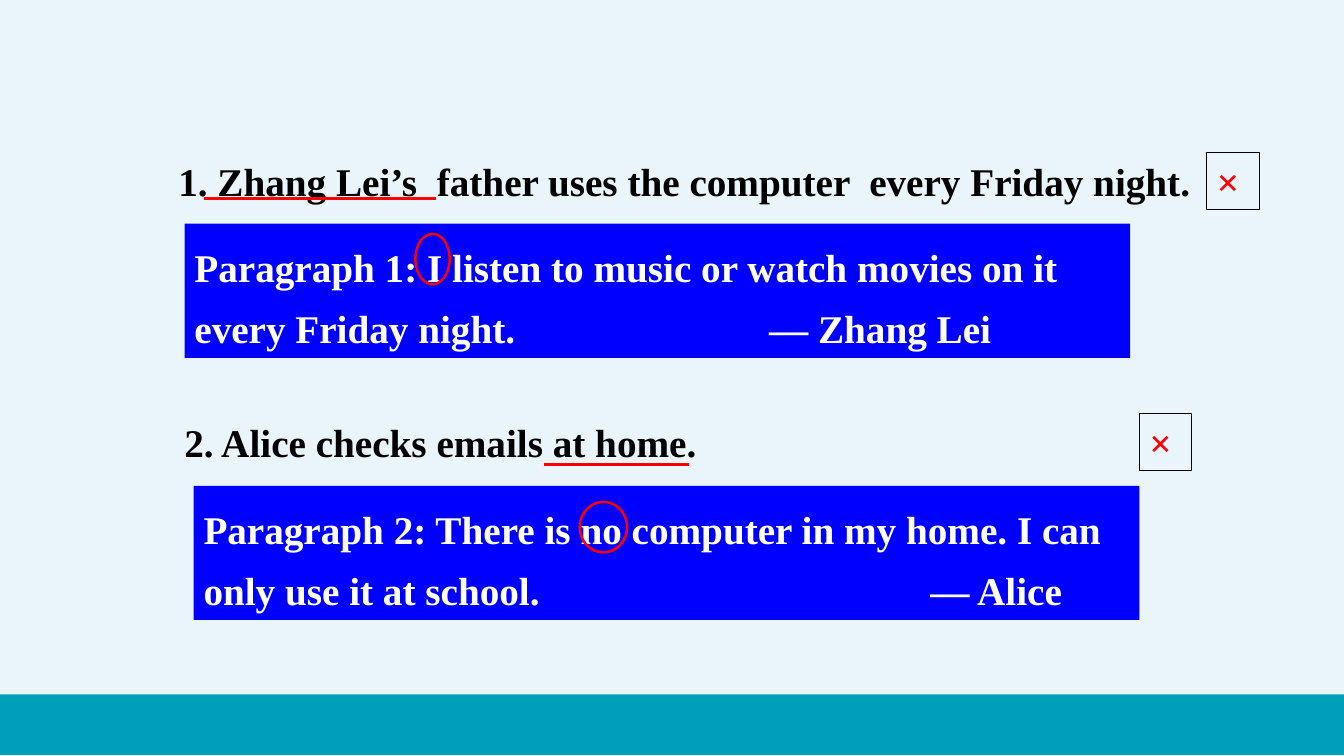
from dataclasses import dataclass
from typing import Optional

from lxml.etree import SubElement
from pptx import Presentation
from pptx.dml.color import RGBColor
from pptx.enum.shapes import MSO_CONNECTOR as Connector, MSO_SHAPE as Preset
from pptx.enum.text import MSO_ANCHOR as Anchor, MSO_AUTO_SIZE as AutoSize, PP_ALIGN as Align
from pptx.oxml.ns import qn
from pptx.util import Inches, Pt


@dataclass(frozen=True)
class Theme:
    sky: RGBColor = RGBColor(0xEA, 0xF5, 0xFB)
    teal: RGBColor = RGBColor(0x00, 0x9F, 0xB9)
    blue: RGBColor = RGBColor(0x00, 0x00, 0xFF)
    red: RGBColor = RGBColor(0xFF, 0x00, 0x00)
    black: RGBColor = RGBColor(0x00, 0x00, 0x00)
    white: RGBColor = RGBColor(0xFF, 0xFF, 0xFF)
    face: str = "Times New Roman"
    body: Pt = Pt(28)
    underline: Pt = Pt(2.5)
    ring: Pt = Pt(1.75)
    frame: Pt = Pt(0.75)
    spacing: float = 1.3


@dataclass(frozen=True)
class Area:
    left: float
    top: float
    width: float
    height: float

    def lengths(self) -> list:
        return [Inches(n) for n in (self.left, self.top, self.width, self.height)]


@dataclass(frozen=True)
class Exercise:
    statement: str
    statement_area: Area
    underline_start: float
    underline_end: float
    underline_top: float
    mark_area: Area
    evidence: str
    evidence_area: Area
    signature_tab: float
    ring_area: Area


THEME = Theme()
EXERCISES = [
    Exercise(
        "1. Zhang Lei’s  father uses the computer  every Friday night.",
        Area(1.67, 1.37, 10.5, 0.65), 2.02, 4.32, 1.97,
        Area(11.97, 1.51, 0.52, 0.57),
        "Paragraph 1: I listen to music or watch movies on it every Friday night.\t— Zhang Lei",
        Area(1.83, 2.22, 9.38, 1.33), 5.7,
        Area(4.12, 2.32, 0.34, 0.5),
    ),
    Exercise(
        "2. Alice checks emails at home.",
        Area(1.73, 3.96, 10.5, 0.65), 5.4, 6.83, 4.61,
        Area(11.3, 4.1, 0.52, 0.57),
        "Paragraph 2: There is no computer in my home. I can only use it at school.\t— Alice",
        Area(1.92, 4.82, 9.38, 1.33), 7.21,
        Area(5.75, 4.98, 0.47, 0.5),
    ),
]


def write_text(box, text: str, color: RGBColor, spacing: Optional[float] = None,
               tab: Optional[float] = None) -> None:
    frame = box.text_frame
    frame_format = {"word_wrap": True, "auto_size": AutoSize.SHAPE_TO_FIT_TEXT,
                    "vertical_anchor": Anchor.TOP}
    for name, value in frame_format.items():
        setattr(frame, name, value)
    para = frame.paragraphs[0]
    para.alignment = Align.LEFT
    if spacing:
        para.line_spacing = spacing
    if tab:
        tabs = SubElement(para._p.get_or_add_pPr(), qn("a:tabLst"))
        SubElement(tabs, qn("a:tab"), pos=str(Inches(tab)), algn="l")
    span = para.add_run()
    span.text = text
    span_format = {"name": THEME.face, "size": THEME.body, "bold": True}
    for name, value in span_format.items():
        setattr(span.font, name, value)
    span.font.color.rgb = color


def add_box(page, preset: Preset, area: Area, fill: Optional[RGBColor] = None,
            line: Optional[RGBColor] = None, weight: Optional[Pt] = None):
    box = page.shapes.add_shape(preset, *area.lengths())
    box.shadow.inherit = False
    if fill is None:
        box.fill.background()
    else:
        box.fill.solid()
        box.fill.fore_color.rgb = fill
    if line is None:
        box.line.fill.background()
    else:
        box.line.color.rgb = line
        box.line.width = weight
    return box


def add_underline(page, start: float, end: float, top: float) -> None:
    rule = page.shapes.add_connector(
        Connector.STRAIGHT, Inches(start), Inches(top), Inches(end), Inches(top))
    rule.line.color.rgb = THEME.red
    rule.line.width = THEME.underline
    SubElement(rule._element.spPr, qn("a:effectLst"))


def add_exercise(page, exercise: Exercise) -> None:
    statement = page.shapes.add_textbox(*exercise.statement_area.lengths())
    write_text(statement, exercise.statement, THEME.black, THEME.spacing)
    add_underline(page, exercise.underline_start, exercise.underline_end, exercise.underline_top)
    mark = add_box(page, Preset.RECTANGLE, exercise.mark_area,
                   line=THEME.black, weight=THEME.frame)
    write_text(mark, "×", THEME.red)
    evidence = add_box(page, Preset.RECTANGLE, exercise.evidence_area, fill=THEME.blue)
    write_text(evidence, exercise.evidence, THEME.white, THEME.spacing, exercise.signature_tab)
    add_box(page, Preset.OVAL, exercise.ring_area, line=THEME.red, weight=THEME.ring)


def main() -> None:
    deck = Presentation()
    deck.slide_width = Inches(13.33)
    deck.slide_height = Inches(7.5)
    page = deck.slides.add_slide(deck.slide_layouts[6])
    page.background.fill.solid()
    page.background.fill.fore_color.rgb = THEME.sky
    add_box(page, Preset.RECTANGLE, Area(0, 6.89, 13.33, 0.6), fill=THEME.teal)
    for exercise in EXERCISES:
        add_exercise(page, exercise)
    deck.save("out.pptx")


if __name__ == "__main__":
    main()
